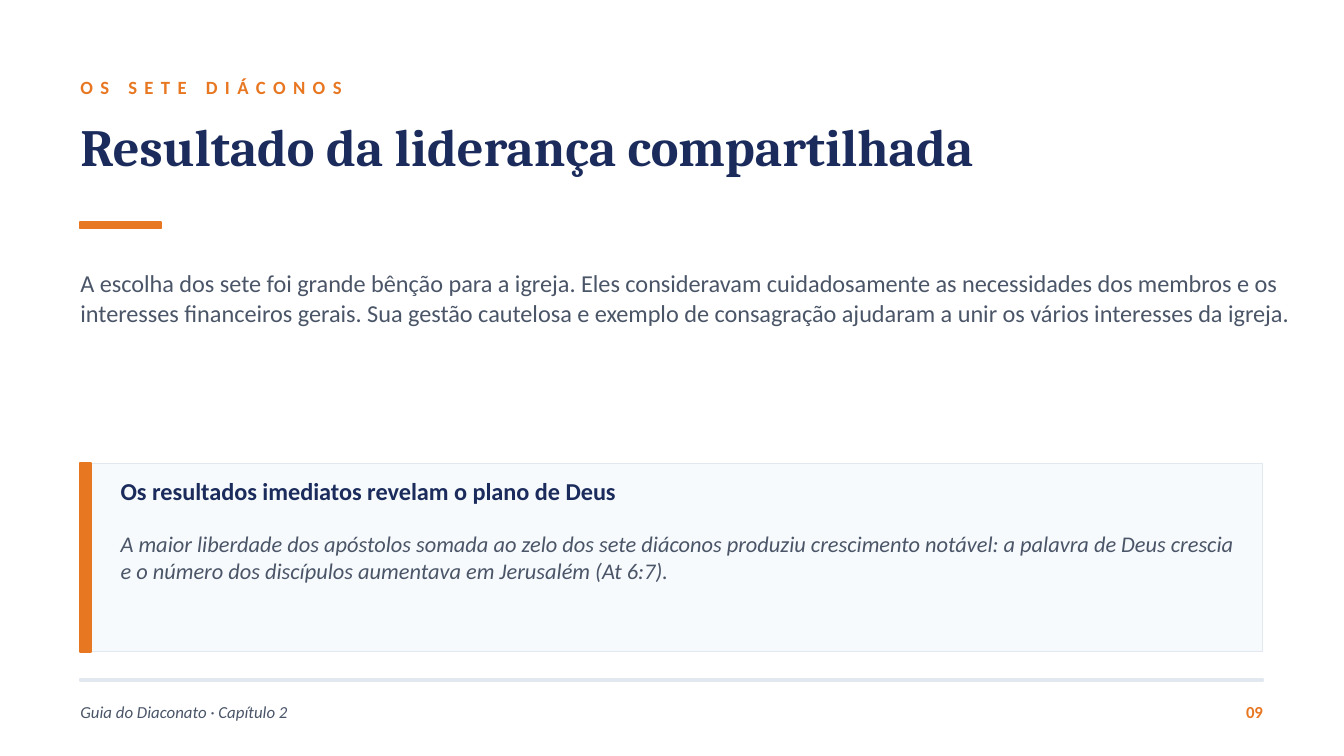
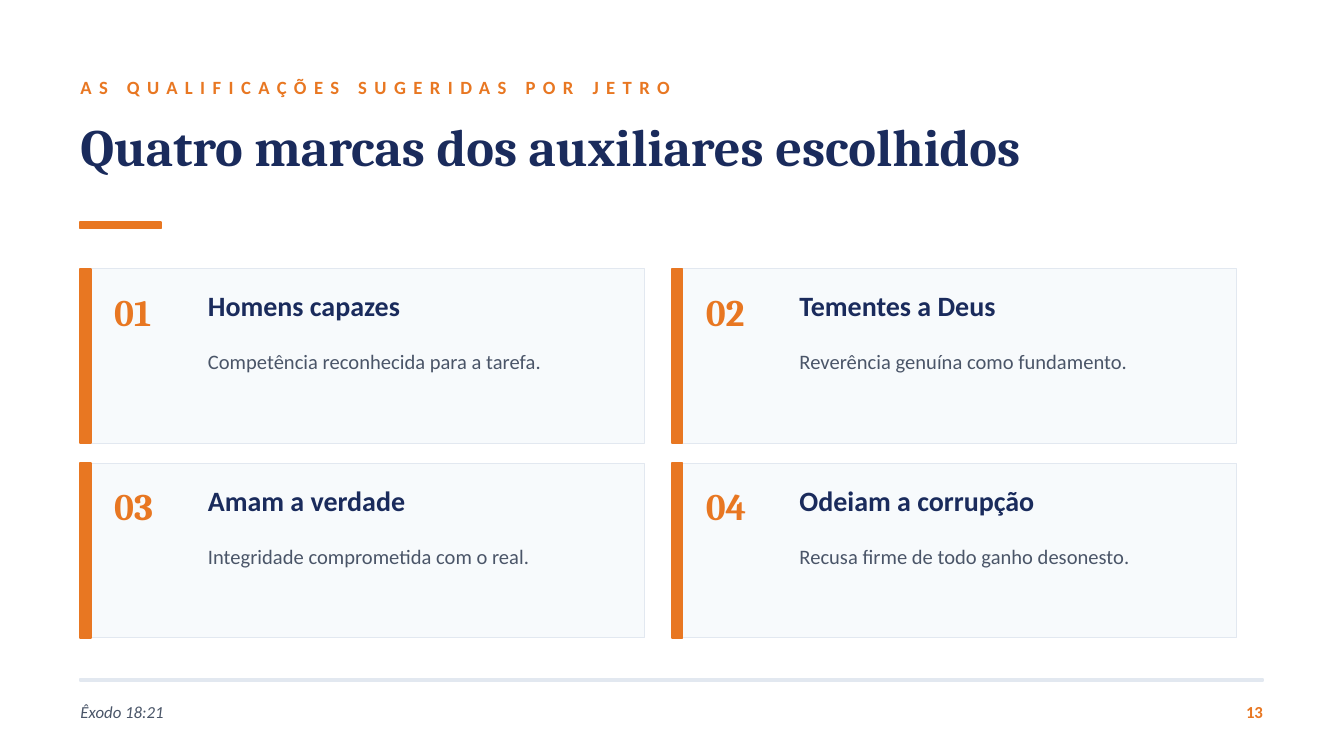
from dataclasses import dataclass

from pptx import Presentation
from pptx import util as u
from pptx.dml.color import RGBColor
from pptx.enum import shapes, text as t


@dataclass(frozen=True)
class Theme:
    navy: str = "1A2B5C"
    orange: str = "E87722"
    slate: str = "4A5568"
    pale: str = "F7FAFC"
    rule: str = "E2E8F0"
    sans: str = "Calibri"
    serif: str = "Cambria"
    title: int = 28
    number: int = 20
    head: int = 15
    body: int = 13
    quote: int = 12
    note: int = 11
    label: int = 10
    foot: int = 9


LEFT = 1.52
WIDE = 22.35
FULL = 22.86
TOP = 5.08
LOWER = 8.76


class Deck:
    def __init__(self):
        self.theme = Theme()
        self.deck = Presentation()
        self.deck.slide_width = u.Cm(25.4)
        self.deck.slide_height = u.Cm(14.29)
        self.slide = None

    def text(self, words, x, y, w, h, *, size, color, font=None, bold=False,
             italic=False, spacing=0, middle=False, right=False):
        box = self.slide.shapes.add_textbox(u.Cm(x), u.Cm(y), u.Cm(w), u.Cm(h))
        frame = box.text_frame
        frame.word_wrap = True
        frame.margin_left = frame.margin_right = 0
        frame.margin_top = frame.margin_bottom = 0
        frame.vertical_anchor = t.MSO_ANCHOR.MIDDLE if middle else t.MSO_ANCHOR.TOP
        para = frame.paragraphs[0]
        para.alignment = t.PP_ALIGN.RIGHT if right else t.PP_ALIGN.LEFT
        run = para.add_run()
        run.text = words
        run.font.size = u.Pt(size)
        run.font.name = font or self.theme.sans
        run.font.bold = bold
        run.font.italic = italic
        run.font.color.rgb = RGBColor.from_string(color)
        if spacing:
            run.font._element.set("spc", str(spacing * 100))

    def rect(self, x, y, w, h, fill, line=None, weight=1):
        shape = self.slide.shapes.add_shape(
            shapes.MSO_SHAPE.RECTANGLE, u.Cm(x), u.Cm(y), u.Cm(w), u.Cm(h))
        shape.shadow.inherit = False
        shape.fill.solid()
        shape.fill.fore_color.rgb = RGBColor.from_string(fill)
        shape.line.color.rgb = RGBColor.from_string(line or fill)
        shape.line.width = u.Pt(weight)

    def panel(self, x, y, w, h):
        self.rect(x, y, w, h, self.theme.pale, self.theme.rule, 0.5)
        self.rect(x, y, 0.2, h, self.theme.orange)

    def page(self, label, title, source, number):
        th = self.theme
        self.slide = self.deck.slides.add_slide(self.deck.slide_layouts[6])
        self.text(label, LEFT, 1.27, FULL, 0.76, size=th.label,
                  color=th.orange, bold=True, spacing=4, middle=True)
        self.text(title, LEFT, 2.16, FULL, 1.78, size=th.title,
                  color=th.navy, font=th.serif, bold=True)
        self.rect(LEFT, 4.19, 1.52, 0.13, th.orange)
        self.rect(LEFT, 12.83, WIDE, 0.05, th.rule)
        self.text(source, LEFT, 13.08, 15.24, 0.76, size=th.foot,
                  color=th.slate, italic=True, middle=True)
        self.text(number, LEFT + WIDE - 1.27, 13.08, 1.27, 0.76, size=th.foot,
                  color=th.orange, bold=True, middle=True, right=True)

    def callout(self, head, words):
        th = self.theme
        self.panel(LEFT, LOWER, WIDE, 3.56)
        self.text(head, LEFT + 0.76, LOWER + 0.25, 21.08, 0.89,
                  size=th.body, color=th.navy, bold=True)
        self.text(words, LEFT + 0.76, LOWER + 1.27, 21.08, 2.16,
                  size=th.quote, color=th.slate, italic=True)

    def card(self, x, y, number, head, words):
        th = self.theme
        self.panel(x, y, 10.67, 3.3)
        self.text(number, x + 0.64, y + 0.38, 1.78, 1.02, size=th.number,
                  color=th.orange, font=th.serif, bold=True)
        self.text(head, x + 2.41, y + 0.38, 7.87, 1.02, size=th.head,
                  color=th.navy, bold=True)
        self.text(words, x + 2.41, y + 1.52, 7.87, 1.65, size=th.note,
                  color=th.slate)


def result(deck):
    deck.page("OS SETE DIÁCONOS", "Resultado da liderança compartilhada",
              "Guia do Diaconato · Capítulo 2", "09")
    deck.text("A escolha dos sete foi grande bênção para a igreja. Eles "
              "consideravam cuidadosamente as necessidades dos membros e os "
              "interesses financeiros gerais. Sua gestão cautelosa e exemplo de "
              "consagração ajudaram a unir os vários interesses da igreja.",
              LEFT, TOP, FULL, 3.3, size=deck.theme.body, color=deck.theme.slate)
    deck.callout("Os resultados imediatos revelam o plano de Deus",
                 "A maior liberdade dos apóstolos somada ao zelo dos sete diáconos "
                 "produziu crescimento notável: a palavra de Deus crescia e o "
                 "número dos discípulos aumentava em Jerusalém (At 6:7).")


def marks(deck):
    deck.page("AS QUALIFICAÇÕES SUGERIDAS POR JETRO",
              "Quatro marcas dos auxiliares escolhidos", "Êxodo 18:21", "13")
    cards = [
        ("Homens capazes", "Competência reconhecida para a tarefa."),
        ("Tementes a Deus", "Reverência genuína como fundamento."),
        ("Amam a verdade", "Integridade comprometida com o real."),
        ("Odeiam a corrupção", "Recusa firme de todo ganho desonesto."),
    ]
    for i, (head, words) in enumerate(cards):
        row, col = divmod(i, 2)
        deck.card(LEFT + col * 11.18, TOP + row * (LOWER - TOP),
                  f"{i + 1:02}", head, words)


def main():
    deck = Deck()
    result(deck)
    marks(deck)
    deck.deck.save("out.pptx")


if __name__ == "__main__":
    main()
